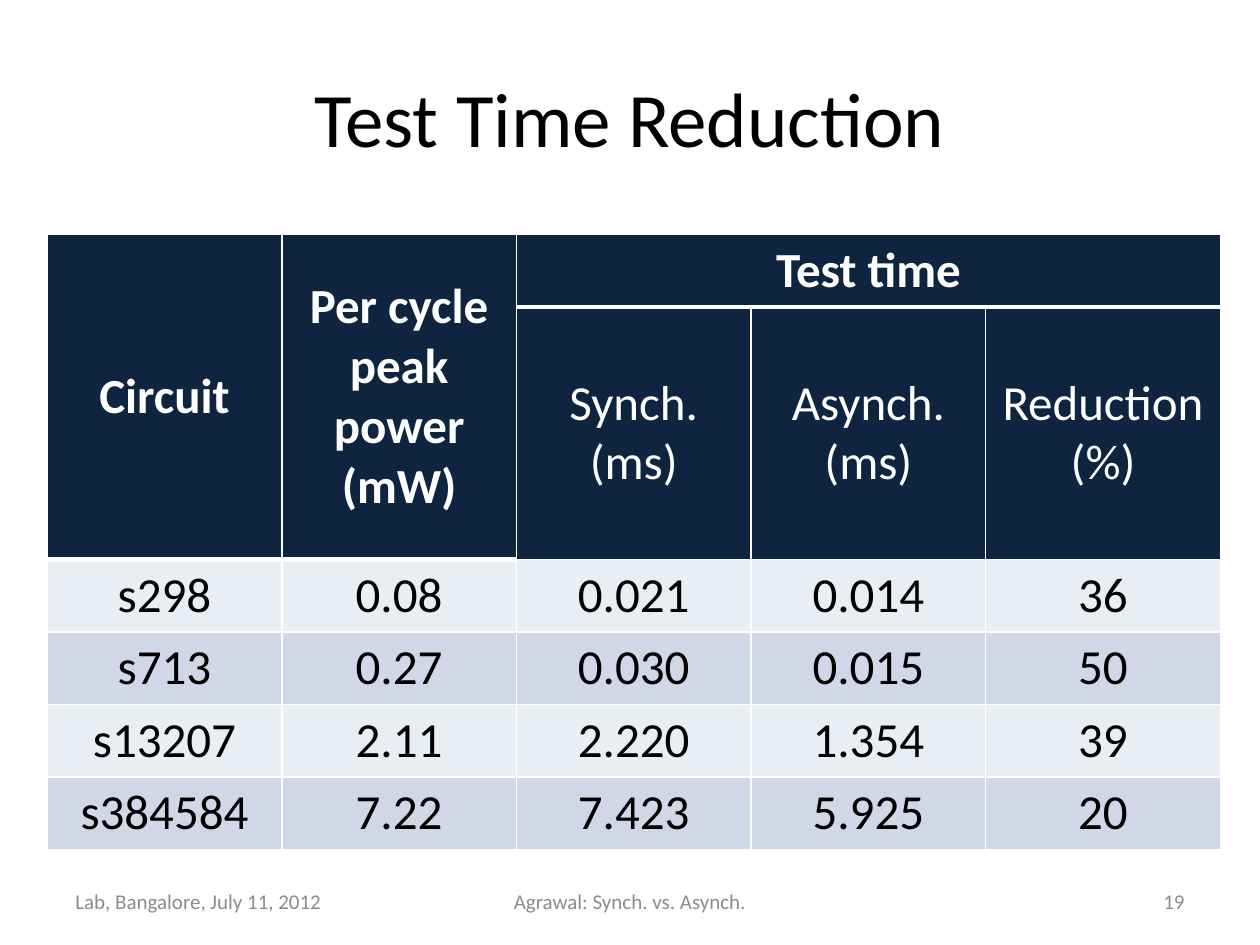
from lxml import etree
from pptx import Presentation
from pptx.dml.color import RGBColor
from pptx.enum import text
from pptx.oxml import ns
from pptx.util import Cm, Pt

TITLE = "Test Time Reduction"
HEADINGS = [
    ["Circuit", "Per cycle peak power (mW)", "Test time", "", ""],
    ["", "", "Synch. (ms)", "Asynch. (ms)", "Reduction (%)"],
]
RESULTS = [
    ["s298", "0.08", "0.021", "0.014", "36"],
    ["s713", "0.27", "0.030", "0.015", "50"],
    ["s13207", "2.11", "2.220", "1.354", "39"],
    ["s384584", "7.22", "7.423", "5.925", "20"],
]
MERGES = [((0, 0), (1, 0)), ((0, 1), (1, 1)), ((0, 2), (0, 4))]
TALL_HEADINGS = 2  # leading columns whose heading spans both heading rows
FOOTERS = [  # text, left, width, alignment
    ("Lab, Bangalore, July 11, 2012", 1.27, 5.93, text.PP_ALIGN.LEFT),
    ("Agrawal: Synch. vs. Asynch.", 8.68, 8.04, text.PP_ALIGN.CENTER),
    ("19", 18.2, 5.93, text.PP_ALIGN.RIGHT),
]

FONT = "Calibri"
BLACK = RGBColor(0x00, 0x00, 0x00)
WHITE = RGBColor(0xFF, 0xFF, 0xFF)
GREY = RGBColor(0x8C, 0x8C, 0x8C)
NAVY = RGBColor(0x0F, 0x24, 0x3E)
BANDS = [RGBColor(0xE9, 0xED, 0xF4), RGBColor(0xD0, 0xD8, 0xE8)]


def write(tf, content, size, color, align, bold=False):
    tf.word_wrap = True
    p = tf.paragraphs[0]
    p.alignment = align
    r = p.add_run()
    r.text = content
    r.font.name, r.font.size, r.font.bold = FONT, Pt(size), bold
    r.font.color.rgb = color


def rule_width(boundary, col):
    """Points of the rule above row number `boundary`: thick under headings."""
    thick = boundary == 1 or (boundary == 2 and col < TALL_HEADINGS)
    return 3 if thick else 1


def add_borders(cell, top, bottom):
    tc_pr = cell._tc.get_or_add_tcPr()
    for side, width in (("L", 1), ("R", 1), ("T", top), ("B", bottom)):
        ln = etree.SubElement(tc_pr, ns.qn(f"a:ln{side}"), w=str(Pt(width)))
        fill = etree.SubElement(ln, ns.qn("a:solidFill"))
        etree.SubElement(fill, ns.qn("a:srgbClr"), val=str(WHITE))


def add_results_table(s):
    rows = HEADINGS + RESULTS
    frame = s.shapes.add_table(len(rows), len(rows[0]), Cm(0.95), Cm(4.73),
                               Cm(23.65), Cm(10.74))
    table = frame.table
    for row in table.rows:
        row.height = Cm(1.04)  # a minimum: rows grow to fit their text
    frame.height = Cm(10.74)
    for first, last in MERGES:
        table.cell(*first).merge(table.cell(*last))

    for i, values in enumerate(rows):
        heading = i < len(HEADINGS)
        for j, value in enumerate(values):
            cell = table.cell(i, j)
            add_borders(cell, rule_width(i, j), rule_width(i + 1, j))
            cell.fill.solid()
            cell.fill.fore_color.rgb = NAVY if heading else BANDS[i % 2]
            cell.vertical_anchor = text.MSO_ANCHOR.MIDDLE
            if value:
                write(cell.text_frame, value, 28, WHITE if heading else BLACK,
                      text.PP_ALIGN.CENTER, bold=i == 0)


def main():
    prs = Presentation()
    prs.slide_width, prs.slide_height = Cm(25.4), Cm(19.05)
    s = prs.slides.add_slide(prs.slide_layouts[5])

    title = s.shapes.title
    title.left, title.top = Cm(1.27), Cm(0.76)
    title.width, title.height = Cm(22.86), Cm(3.18)
    title.text_frame.vertical_anchor = text.MSO_ANCHOR.MIDDLE
    write(title.text_frame, TITLE, 44, BLACK, text.PP_ALIGN.CENTER)

    add_results_table(s)

    for content, left, width, align in FOOTERS:
        sp = s.shapes.add_textbox(Cm(left), Cm(17.66), Cm(width), Cm(1.01))
        sp.text_frame.vertical_anchor = text.MSO_ANCHOR.MIDDLE
        write(sp.text_frame, content, 12, GREY, align)

    prs.save("out.pptx")


if __name__ == "__main__":
    main()
